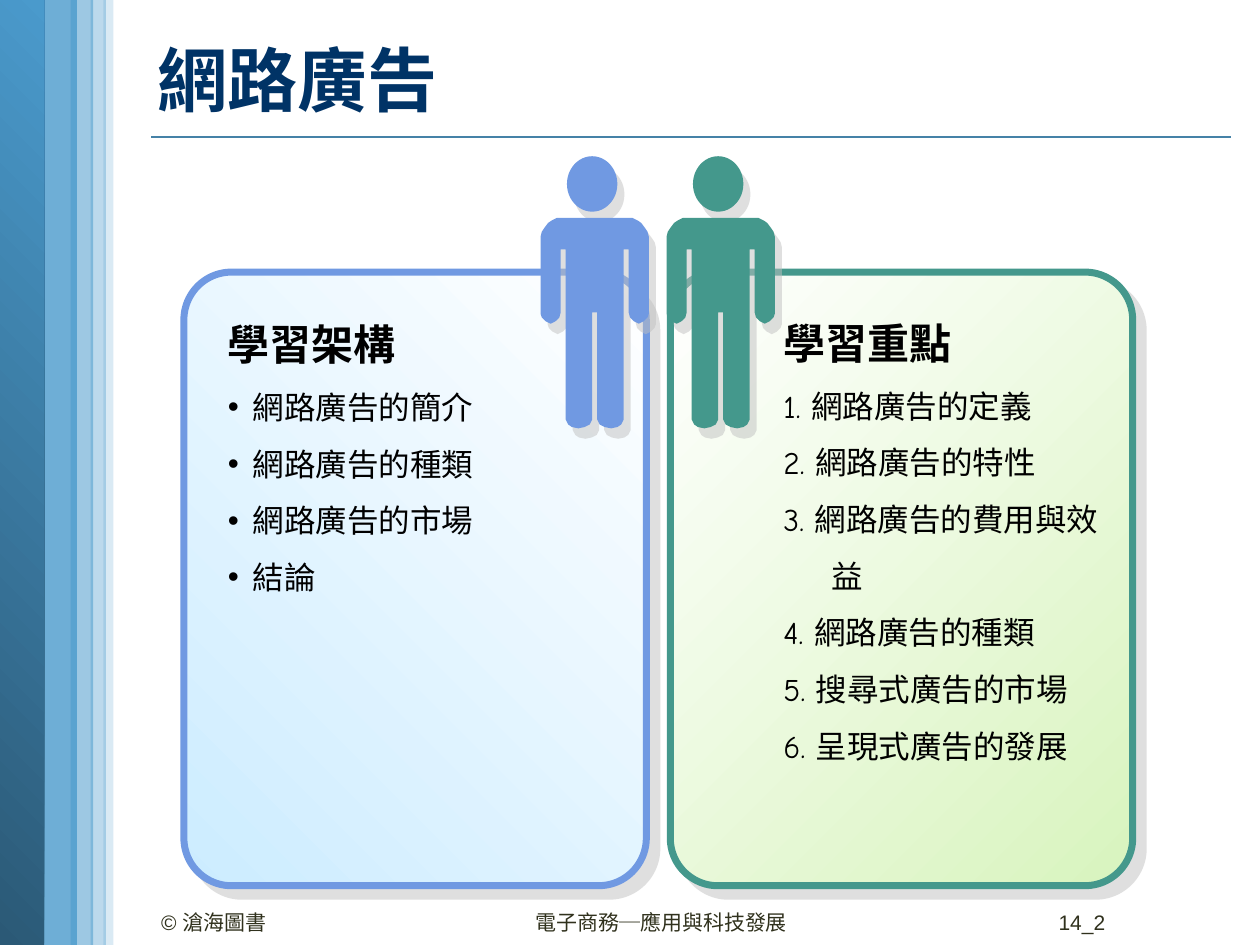
import pptx
import pptx.dml.color
import pptx.enum.shapes
import pptx.enum.text
import pptx.oxml
import pptx.oxml.ns
import pptx.util
from lxml import etree

Inches, Pt = pptx.util.Inches, pptx.util.Pt
SHAPE = pptx.enum.shapes.MSO_SHAPE
ALIGN = pptx.enum.text.PP_ALIGN
qn = pptx.oxml.ns.qn

BLUE, GREEN, SKY = "7099E2", "44988C", "4A9ACC"

# Right half of the body: distance from its axis, distance below the shoulders
HALF_BODY = [
    (0, 0), (0.3, 0), (0.34, 0.02), (0.37, 0.04), (0.4, 0.08), (0.42, 0.11),
    (0.43, 0.15), (0.43, 0.76), (0.42, 0.79), (0.39, 0.82), (0.35, 0.84),
    (0.31, 0.82), (0.28, 0.79), (0.27, 0.75), (0.27, 0.25), (0.23, 0.25),
    (0.23, 1.6), (0.21, 1.64), (0.18, 1.66), (0.13, 1.67), (0.08, 1.66),
    (0.04, 1.64), (0.02, 1.6), (0.02, 0.75),
]


def rgb(hex_color):
    return pptx.dml.color.RGBColor.from_string(hex_color)


class SlideBuilder:
    body_font = "Comic Neue"
    footer_font = "Arial"

    def __init__(self, prs):
        self.s = prs.slides.add_slide(prs.slide_layouts[6])

    def paint(self, sp, color, alpha=100):
        sp.shadow.inherit = False
        sp.line.fill.background()
        sp.fill.solid()
        sp.fill.fore_color.rgb = rgb(color)
        if alpha < 100:
            clr = sp.fill._xPr.find(qn("a:solidFill"))[0]
            etree.SubElement(clr, qn("a:alpha"), val=str(alpha * 1000))

    def gradient(self, sp, colors, angle):
        """Blend two colours; the angle runs counter-clockwise."""
        sp.fill.gradient()
        sp.fill.gradient_angle = angle
        for stop, color, position in zip(sp.fill.gradient_stops, colors, (0, 1)):
            stop.color.rgb = rgb(color)
            stop.position = position

    def shadow(self, sp, distance, angle):
        sp.shadow.inherit = False
        effects = sp._element.spPr.find(qn("a:effectLst"))
        outer = etree.SubElement(effects, qn("a:outerShdw"), blurRad="0",
                                 dist=str(Pt(distance)), dir=str(angle * 60000),
                                 algn="ctr", rotWithShape="0")
        clr = etree.SubElement(outer, qn("a:srgbClr"), val="C0C0C0")
        etree.SubElement(clr, qn("a:alpha"), val="50000")

    def shape(self, kind, box, color, alpha=100):
        sp = self.s.shapes.add_shape(kind, *map(Inches, box))
        self.paint(sp, color, alpha)
        return sp

    def rule(self, x1, x2, y, color):
        line = self.s.shapes.add_connector(
            pptx.enum.shapes.MSO_CONNECTOR.STRAIGHT,
            Inches(x1), Inches(y), Inches(x2), Inches(y))
        line.line.color.rgb = rgb(color)
        line.line.width = Pt(1)
        etree.SubElement(line._element.spPr, qn("a:effectLst"))

    def panel(self, left, color, colors, angle):
        sp = self.shape(SHAPE.ROUNDED_RECTANGLE, (left, 2.16, 3.67, 4.87), color)
        sp.adjustments[0] = 0.103
        self.gradient(sp, colors, angle)
        sp.line.color.rgb = rgb(color)
        sp.line.width = Pt(4)
        self.shadow(sp, 8.5, 45)

    def person(self, left, color):
        head = self.shape(SHAPE.OVAL, (left + 0.21, 1.24, 0.4, 0.44), color)
        axis, top = left + 0.43, 1.73
        outline = HALF_BODY + [(-x, y) for x, y in reversed(HALF_BODY[1:])]
        points = [(Inches(axis + x), Inches(top + y)) for x, y in outline]
        fb = self.s.shapes.build_freeform(*points[0])
        fb.add_line_segments(points[1:], close=True)
        body = fb.convert_to_shape()
        self.paint(body, color)
        for sp in (head, body):
            self.shadow(sp, 7.2, 56)

    def text_box(self, box):
        tf = self.s.shapes.add_textbox(*map(Inches, box)).text_frame
        tf.word_wrap = True
        return tf

    def run(self, p, text, size, color="000000", bold=False, font=None):
        r = p.add_run()
        r.text = text
        r.font.name = font or self.body_font
        r.font.size = Pt(size)
        r.font.bold = bold
        r.font.color.rgb = rgb(color)

    def title(self, text):
        tf = self.text_box((1.15, 0.07, 8.7, 1.11))
        tf.vertical_anchor = pptx.enum.text.MSO_ANCHOR.MIDDLE
        self.run(tf.paragraphs[0], text, 40, "003366", True)

    def listing(self, box, heading, items, indent, bullet=None):
        """Bold heading above items with a hanging indent."""
        tf = self.text_box(box)
        tf.auto_size = pptx.enum.text.MSO_AUTO_SIZE.SHAPE_TO_FIT_TEXT
        p = tf.paragraphs[0]
        p.line_spacing = 1.5
        self.run(p, heading, 24, bold=True)
        for item in items:
            p = tf.add_paragraph()
            p.line_spacing = 1.5
            pPr = p._p.get_or_add_pPr()
            pPr.set("marL", str(Inches(indent)))
            pPr.set("indent", str(-Inches(indent)))
            if bullet:
                etree.SubElement(pPr, qn("a:buFont"), typeface="Arial")
                etree.SubElement(pPr, qn("a:buChar"), char=bullet)
            self.run(p, item, 18)

    def footer(self, left, width, text, align=ALIGN.LEFT):
        p = self.text_box((left, 7.17, width, 0.26)).paragraphs[0]
        p.alignment = align
        self.run(p, text, 12, "30311D", font=self.footer_font)


def main():
    prs = pptx.Presentation()
    prs.slide_width, prs.slide_height = Inches(10), Inches(7.5)
    b = SlideBuilder(prs)

    b.rule(1.2, 9.77, 1.09, "4582A7")
    b.shape(SHAPE.RECTANGLE, (0.3, 0, 0.31, 7.5), SKY, 80)
    bar = b.shape(SHAPE.RECTANGLE, (0, 0, 0.35, 7.5), SKY)
    b.gradient(bar, ("2B5976", SKY), 45)
    for left, width, alpha in ((0.82, 0.08, 20), (0.56, 0.18, 54), (0.72, 0.12, 37)):
        b.shape(SHAPE.RECTANGLE, (left, 0, width, 7.5), SKY, alpha)
    b.title("網路廣告")

    b.panel(1.46, BLUE, ("CCECFF", "FFFFFF"), 45)
    b.person(4.29, BLUE)
    b.listing((1.71, 2.28, 3.1, 2.52), "學習架構",
              ["網路廣告的簡介", "網路廣告的種類", "網路廣告的市場", "結論"], 0.2, "•")

    b.panel(5.32, GREEN, ("FFFFFF", "D8F4BE"), 315)
    goals = ["網路廣告的定義", "網路廣告的特性", "網路廣告的費用與效益",
             "網路廣告的種類", "搜尋式廣告的市場", "呈現式廣告的發展"]
    b.listing((6.12, 2.27, 2.83, 3.94), "學習重點",
              [f"{n}. {goal}" for n, goal in enumerate(goals, 1)], 0.38)
    b.person(5.29, GREEN)

    b.footer(1.18, 2.33, "© 滄海圖書")
    b.footer(4.15, 2.36, "電子商務─應用與科技發展")
    b.footer(8.15, 0.72, "14_2", ALIGN.RIGHT)
    prs.save("out.pptx")


if __name__ == "__main__":
    main()
